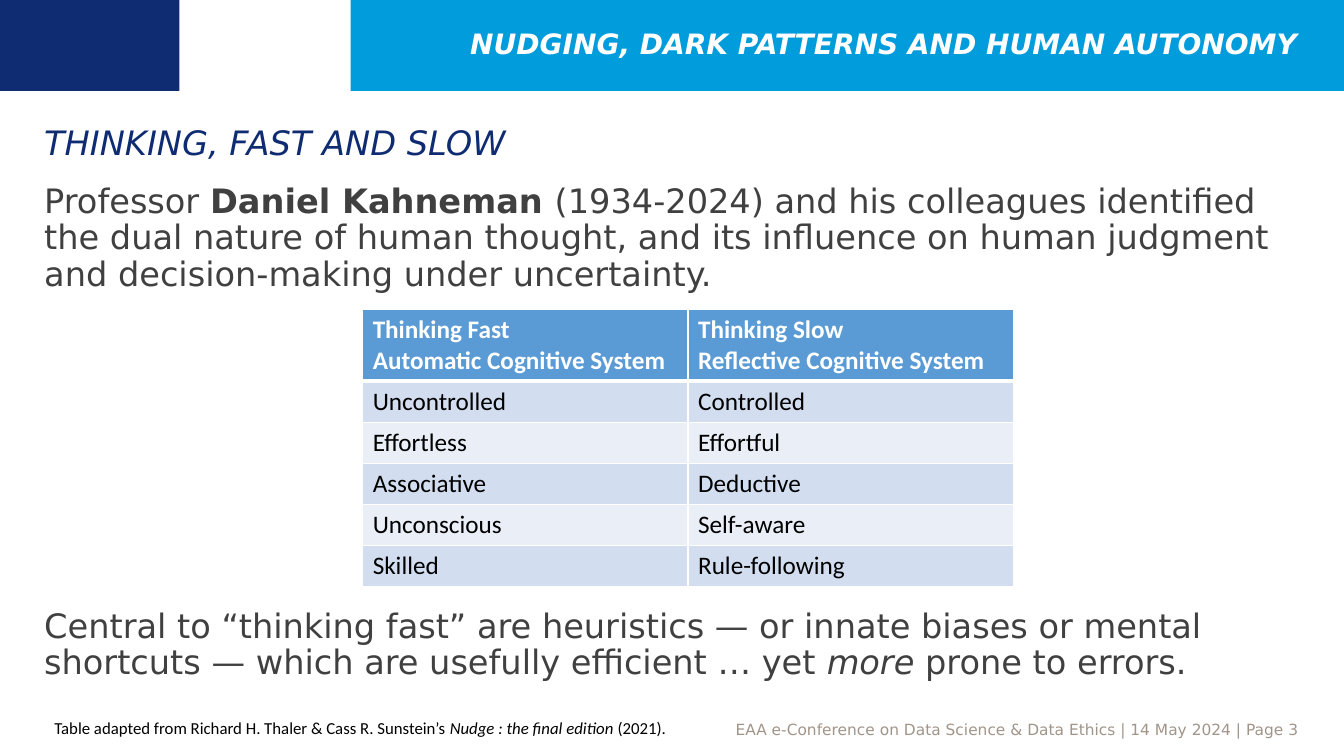
from lxml.etree import SubElement
from pptx import Presentation
from pptx.dml.color import RGBColor
from pptx.enum.shapes import MSO_SHAPE
from pptx.enum.text import MSO_ANCHOR, MSO_AUTO_SIZE, PP_ALIGN
from pptx.oxml.ns import qn
from pptx.util import Cm, Pt

WHITE = RGBColor(0xFF, 0xFF, 0xFF)
BLACK = RGBColor(0, 0, 0)
NAVY = RGBColor(0x0F, 0x2C, 0x73)
SKY = RGBColor(0x00, 0x9C, 0xDB)
TEXT_GREY = RGBColor(0x40, 0x40, 0x40)
FOOTER_GREY = RGBColor(0xA1, 0x95, 0x89)
TABLE_HEAD = RGBColor(0x5B, 0x9B, 0xD5)
BANDS = [RGBColor(0xEA, 0xEF, 0xF7), RGBColor(0xD2, 0xDE, 0xEF)]

BODY_FONT = "DejaVu Sans"
TABLE_FONT = "Calibri"

TITLE = {"name": BODY_FONT, "size": Pt(20), "color": WHITE, "bold": True, "italic": True}
SUBTITLE = {"name": BODY_FONT, "size": Pt(24), "color": NAVY, "italic": True}
BODY = {"name": BODY_FONT, "size": Pt(24), "color": TEXT_GREY}
HEAD_CELL = {"name": TABLE_FONT, "size": Pt(18), "color": WHITE, "bold": True}
CELL = {"name": TABLE_FONT, "size": Pt(18), "color": BLACK, "bold": False}
SOURCE = {"name": TABLE_FONT, "size": Pt(12), "color": BLACK}
FOOTER = {"name": BODY_FONT, "size": Pt(11), "color": FOOTER_GREY}

COMPARISON = [
    ("Thinking Fast\nAutomatic Cognitive System", "Thinking Slow\nReflective Cognitive System"),
    ("Uncontrolled", "Controlled"),
    ("Effortless", "Effortful"),
    ("Associative", "Deductive"),
    ("Unconscious", "Self-aware"),
    ("Skilled", "Rule-following"),
]


def format_font(font, style):
    for key, value in style.items():
        if key == "color":
            font.color.rgb = value
        else:
            setattr(font, key, value)


def add_runs(p, runs, style):
    for text, extra in runs:
        r = p.add_run()
        r.text = text
        format_font(r.font, {**style, **extra})


def place(sp, x, y, w, h):
    sp.left, sp.top, sp.width, sp.height = Cm(x), Cm(y), Cm(w), Cm(h)


def fill_placeholder(sp, box, paragraphs, style, gap=0,
                     align=PP_ALIGN.LEFT, anchor=MSO_ANCHOR.TOP):
    place(sp, *box)
    tf = sp.text_frame
    tf.word_wrap = True
    tf.auto_size = MSO_AUTO_SIZE.NONE
    tf.vertical_anchor = anchor
    for i, runs in enumerate(paragraphs):
        p = tf.add_paragraph() if i else tf.paragraphs[0]
        pPr = p._p.get_or_add_pPr()
        pPr.set("marL", "0")
        pPr.set("indent", "0")
        SubElement(pPr, qn("a:buNone"))
        p.alignment = align
        p.line_spacing = 0.9
        p.space_before = Pt(gap if i else 0)
        add_runs(p, runs, style)


def add_header(s, x, y, w, h):
    navy_w, bar_x = 4.52, 8.84
    for left, width, color in [(x, navy_w, NAVY), (x + bar_x, w - bar_x, SKY)]:
        sp = s.shapes.add_shape(MSO_SHAPE.RECTANGLE, Cm(left), Cm(y), Cm(width), Cm(h))
        sp.shadow.inherit = False
        sp.fill.solid()
        sp.fill.fore_color.rgb = color
        sp.line.fill.background()
        s.shapes._spTree.insert(2, sp._element)
    title = [("NUDGING, DARK PATTERNS AND HUMAN AUTONOMY", {})]
    fill_placeholder(s.shapes.title, (x + bar_x, y, w - bar_x - 0.92, h), [title], TITLE,
                     align=PP_ALIGN.RIGHT, anchor=MSO_ANCHOR.MIDDLE)


def add_body(s, x, y, w, h):
    subtitle, body = s.placeholders[1], s.placeholders[2]
    fill_placeholder(subtitle, (x, y, w, 0.99), [[("THINKING, FAST AND SLOW", {})]], SUBTITLE)
    intro = [
        ("Professor ", {}),
        ("Daniel Kahneman ", {"bold": True}),
        ("(1934-2024) and his colleagues identified the dual nature of human thought, "
         "and its influence on human judgment and decision-making under uncertainty.", {}),
    ]
    closing = [
        ("Central to “thinking fast” are heuristics — or innate biases or mental shortcuts "
         "— which are usefully efficient … yet ", {}),
        ("more", {"italic": True}),
        (" prone to errors.", {}),
    ]
    fill_placeholder(body, (x, y + 1.47, w, h - 1.47), [intro, closing], BODY, gap=226)
    body.fill.solid()
    body.fill.fore_color.rgb = WHITE


def set_borders(cell, top, bottom):
    tcPr = cell._tc.get_or_add_tcPr()
    for side, width in [("L", 1), ("R", 1), ("T", top), ("B", bottom)]:
        ln = SubElement(tcPr, qn(f"a:ln{side}"), w=str(Pt(width)))
        SubElement(SubElement(ln, qn("a:solidFill")), qn("a:srgbClr"), val=str(WHITE))


def add_comparison(s, x, y, w, h):
    head_h = 1.76
    row_h = (h - head_h) / (len(COMPARISON) - 1)
    table = s.shapes.add_table(len(COMPARISON), 2, Cm(x), Cm(y), Cm(w), Cm(h)).table
    for column in table.columns:
        column.width = Cm(w / 2)
    for i, texts in enumerate(COMPARISON):
        table.rows[i].height = Cm(row_h if i else head_h)
        for j, text in enumerate(texts):
            cell = table.cell(i, j)
            set_borders(cell, 3 if i == 1 else 1, 1 if i else 3)
            cell.fill.solid()
            cell.fill.fore_color.rgb = BANDS[i % 2] if i else TABLE_HEAD
            cell.text = text
            for p in cell.text_frame.paragraphs:
                format_font(p.runs[0].font, CELL if i else HEAD_CELL)


def add_note(s, box, runs, style, align):
    tf = s.shapes.add_textbox(*map(Cm, box)).text_frame
    tf.word_wrap = True
    p = tf.paragraphs[0]
    p.alignment = align
    add_runs(p, runs, style)


def add_footer(s, x, y, w, h):
    footer = [("EAA e-Conference on Data Science & Data Ethics | 14 May 2024 | Page 3", {})]
    add_note(s, (x, y + 0.05, w, h), footer, FOOTER, PP_ALIGN.RIGHT)
    source = [
        ("Table adapted from Richard H. Thaler & Cass R. Sunstein’s ", {}),
        ("Nudge : the final edition ", {"italic": True}),
        ("(2021).", {}),
    ]
    add_note(s, (x + 0.13, y, 16.23, h), source, SOURCE, PP_ALIGN.LEFT)


def main():
    prs = Presentation()
    prs.slide_width, prs.slide_height = Cm(33.87), Cm(19.05)
    s = prs.slides.add_slide(prs.slide_layouts[3])
    add_header(s, 0, 0, 33.87, 2.29)
    add_body(s, 0.86, 3.05, 32, 14.6)
    add_comparison(s, 9.14, 7.8, 16.4, 6.94)
    add_footer(s, 0.99, 17.96, 32, 0.75)
    prs.save("out.pptx")


if __name__ == "__main__":
    main()
